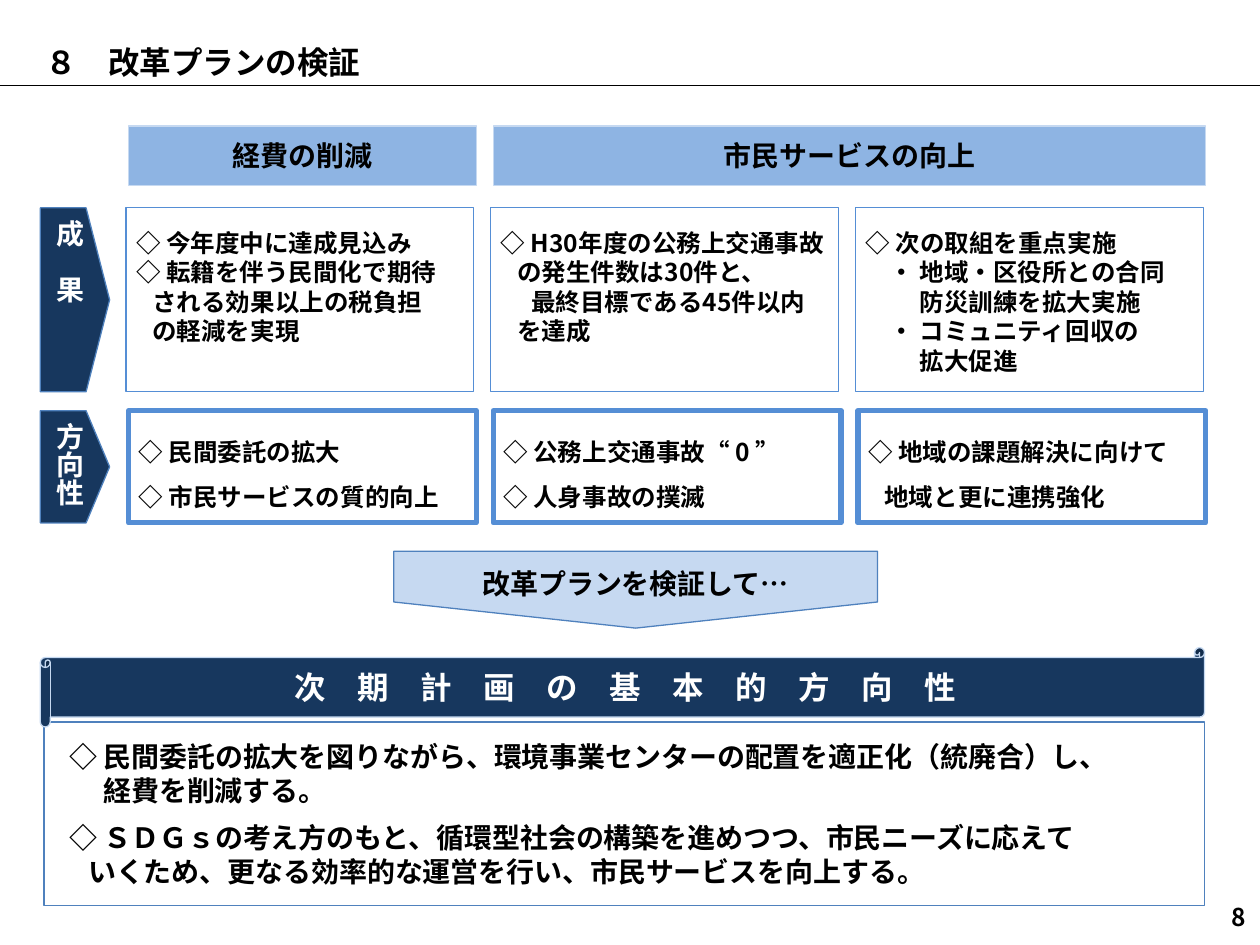
import pptx
import pptx.dml.color
import pptx.enum.shapes
import pptx.enum.text
import pptx.oxml
import pptx.util

Inches, Pt = pptx.util.Inches, pptx.util.Pt
RGB = pptx.dml.color.RGBColor
KIND = pptx.enum.shapes.MSO_SHAPE
ALIGN = pptx.enum.text.PP_ALIGN
ANCHOR = pptx.enum.text.MSO_ANCHOR
FONT = "Noto Sans CJK JP"
BLACK, WHITE = RGB(0, 0, 0), RGB(255, 255, 255)
NAVY, EDGE, BLUE = RGB(0x17, 0x37, 0x5E), RGB(0x4F, 0x81, 0xBD), RGB(0x55, 0x8E, 0xD5)
SKY, PALE = RGB(0x8E, 0xB4, 0xE3), RGB(0xC6, 0xD9, 0xF1)

# Each line of text is a string, or (string, indent in inches).
TITLE = [("８　改革プランの検証", 0.25)]
HEADS = [("経費の削減", 0, 1), ("市民サービスの向上", 1, 2)]  # text, first column, span
RESULTS = [
    ["◇ 今年度中に達成見込み", "◇ 転籍を伴う民間化で期待",
     ("される効果以上の税負担", 0.13), ("の軽減を実現", 0.13)],
    ["◇ H30年度の公務上交通事故", ("の発生件数は30件と、", 0.13),
     ("最終目標である45件以内", 0.24), ("を達成", 0.13)],
    ["◇ 次の取組を重点実施", ("・ 地域・区役所との合同", 0.19), ("防災訓練を拡大実施", 0.43),
     ("・ コミュニティ回収の", 0.19), ("拡大促進", 0.43)],
]
AIMS = [
    ["◇ 民間委託の拡大", "◇ 市民サービスの質的向上"],
    ["◇ 公務上交通事故“ 0 ”", "◇ 人身事故の撲滅"],
    ["◇ 地域の課題解決に向けて", ("地域と更に連携強化", 0.13)],
]
PLAN = [
    "◇ 民間委託の拡大を図りながら、環境事業センターの配置を適正化（統廃合）し、",
    ("経費を削減する。", 0.27),
    "◇ ＳＤＧｓの考え方のもと、循環型社会の構築を進めつつ、市民ニーズに応えて",
    ("いくため、更なる効率的な運営を行い、市民サービスを向上する。", 0.15),
]
LEFT, STEP, WIDE = 1.02, 2.895, 2.76
ROWS = {"成　果": (1.65, 1.46), "方向性": (3.26, 0.89)}  # label: top, height


def write(shape, lines, size, color=BLACK, align=ALIGN.LEFT, anchor=ANCHOR.MIDDLE,
          inset=(0.1, 0.05, 0.1, 0.05), space=None, vert=None):
    frame = shape.text_frame
    frame.word_wrap = True
    frame.vertical_anchor = anchor
    (frame.margin_left, frame.margin_top,
     frame.margin_right, frame.margin_bottom) = map(Inches, inset)
    if vert:
        frame._txBody.bodyPr.set("vert", vert)
    for i, line in enumerate(lines):
        text, indent = (line, 0) if isinstance(line, str) else line
        para = frame.paragraphs[0] if i == 0 else frame.add_paragraph()
        para.text = text
        para.alignment = align
        if space:
            para.line_spacing = space
        if indent:
            para._p.get_or_add_pPr().set("marL", str(Inches(indent)))
        font = para.font
        font.size, font.bold, font.name = Pt(size), True, FONT
        font.color.rgb = color
        east = pptx.oxml.parse_xml(
            '<a:ea xmlns:a="http://schemas.openxmlformats.org/drawingml/2006/main"'
            f' typeface="{FONT}"/>')
        font._rPr.find(pptx.oxml.ns.qn("a:latin")).addnext(east)


def draw(slide, kind, box, fill, line, weight=0.75):
    shape = slide.shapes.add_shape(kind, *map(Inches, box))
    shape.shadow.inherit = False
    if fill is None:
        shape.fill.background()
    else:
        shape.fill.solid()
        shape.fill.fore_color.rgb = fill
    shape.line.color.rgb = line
    shape.line.width = Pt(weight)
    return shape


def label(slide, box, lines, size):
    """Add a plain text box and return its first paragraph."""
    shape = slide.shapes.add_textbox(*map(Inches, box))
    write(shape, lines, size)
    return shape.text_frame.paragraphs[0]


def main():
    deck = pptx.Presentation()
    deck.slide_width, deck.slide_height = Inches(10), Inches(7.5)
    slide = deck.slides.add_slide(deck.slide_layouts[6])

    rule = slide.shapes.add_connector(
        pptx.enum.shapes.MSO_CONNECTOR.STRAIGHT, 0, Inches(0.68), Inches(10), Inches(0.68))
    rule.line.color.rgb = BLACK
    rule.line.width = Pt(0.75)
    rule._element.spPr.append(pptx.oxml.parse_xml(
        '<a:effectLst xmlns:a="http://schemas.openxmlformats.org/drawingml/2006/main"/>'))
    # The blank line above pushes the title down by one line height.
    label(slide, (0.01, 0.3, 9.99, 0.38), TITLE, 18)
    label(slide, (9.48, 7.08, 0.51, 0.39), ["8"], 14).alignment = ALIGN.RIGHT

    for text, col, span in HEADS:
        box = (LEFT + col * STEP, 1, WIDE + (span - 1) * STEP, 0.47)
        head = draw(slide, KIND.FLOWCHART_PROCESS, box, SKY, PALE)
        write(head, [text], 16, align=ALIGN.CENTER)

    for text, (top, high) in ROWS.items():
        tag = draw(slide, KIND.PENTAGON, (0.32, top, 0.55, high), NAVY, EDGE)
        tag.adjustments[0] = 0.34
        write(tag, [text], 16, WHITE, ALIGN.CENTER, vert="eaVert")

    (top, high), (low, short) = ROWS.values()
    for i, (result, aim) in enumerate(zip(RESULTS, AIMS)):
        left = LEFT + i * STEP
        card = draw(slide, KIND.RECTANGLE, (left - 0.02, top, WIDE, high), None, BLUE)
        write(card, result, 14, anchor=ANCHOR.TOP, inset=(0.08, 0.16, 0.08, 0.04))
        card = draw(slide, KIND.RECTANGLE, (left, low, WIDE, short), WHITE, BLUE, 3)
        write(card, aim, 14, inset=(0.08, 0.04, 0.08, 0.04), space=1.5)

    arrow = draw(slide, KIND.PENTAGON, (4.74, 2.76, 0.61, 3.84), PALE, EDGE)
    arrow.adjustments[0] = 0.34
    arrow.rotation = 90
    write(arrow, ["改革プランを検証して…"], 16, align=ALIGN.CENTER, vert="vert270")

    plan = draw(slide, KIND.RECTANGLE, (0.35, 5.73, 9.21, 1.46), WHITE, EDGE)
    write(plan, PLAN, 16, inset=(0.2, 0.04, 0.2, 0.04))
    plan.text_frame.paragraphs[2].space_before = Pt(8)
    scroll = draw(slide, KIND.HORIZONTAL_SCROLL, (0.32, 5.14, 9.24, 0.63), NAVY, PALE)
    write(scroll, ["　".join("次期計画の基本的方向性")], 18, WHITE, ALIGN.CENTER)

    deck.save("out.pptx")


if __name__ == "__main__":
    main()
